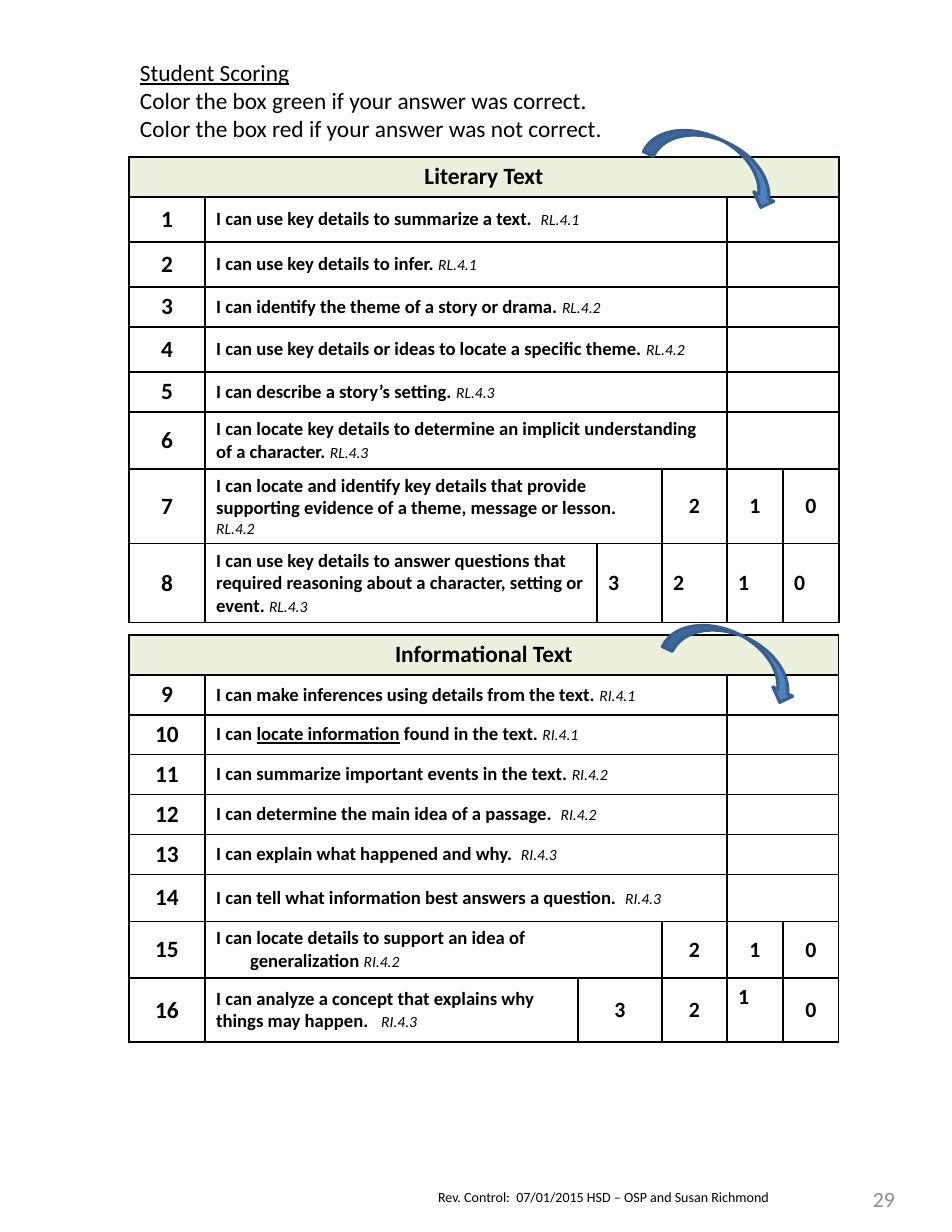
"""Build the student scoring page with its two checklists."""
import pptx
import pptx.util
import pptx.dml.color
import pptx.enum.shapes
import pptx.enum.text
import pptx.oxml
import pptx.oxml.ns

RGB = pptx.dml.color.RGBColor
BLACK, WHITE, GREEN = RGB(0, 0, 0), RGB(255, 255, 255), RGB(0xEB, 0xF1, 0xDE)
GRAY, BLUE, NAVY = RGB(0x8C, 0x8C, 0x8C), RGB(0x4F, 0x81, 0xBD), RGB(0x3A, 0x5F, 0x8C)
ALIGN = pptx.enum.text.PP_ALIGN
ANCHOR = pptx.enum.text.MSO_ANCHOR
LEFT, MID, RIGHT = ALIGN.LEFT, ALIGN.CENTER, ALIGN.RIGHT
PX = 914400 // 112

TABLES = [
    {"title": "Informational Text", "top": 635, "cols": [76, 373, 84, 65, 56, 56],
     "rows": [40, 40, 39, 40, 40, 40, 47, 57, 64], "align": MID,
     "items": [
         ("9", "I can make inferences using details from the text. ", "RI.4.1", ""),
         ("10", "I can |locate information| found in the text. ", "RI.4.1", ""),
         ("11", "I can summarize important events in the text. ", "RI.4.2", ""),
         ("12", "I can determine the main idea of a passage.  ", "RI.4.2", ""),
         ("13", "I can explain what happened and why.  ", "RI.4.3", ""),
         ("14", "I can tell what information best answers a question.  ", "RI.4.3", ""),
         ("15", "I can locate details to support an idea of\n\tgeneralization ", "RI.4.2", "210"),
         ("16", "I can analyze a concept that explains why\nthings may happen.   ",
          "RI.4.3", "3210")]},
    {"title": "Literary Text", "top": 157, "cols": [76, 392, 65, 65, 56, 56],
     "rows": [40, 45, 45, 40, 45, 40, 57, 75, 79], "align": LEFT,
     "items": [
         ("1", "I can use key details to summarize a text.  ", "RL.4.1", ""),
         ("2", "I can use key details to infer. ", "RL.4.1", ""),
         ("3", "I can identify the theme of a story or drama. ", "RL.4.2", ""),
         ("4", "I can use key details or ideas to locate a specific theme. ", "RL.4.2", ""),
         ("5", "I can describe a story’s setting. ", "RL.4.3", ""),
         ("6", "I can locate key details to determine an implicit understanding "
               "of a character. ", "RL.4.3", ""),
         ("7", "I can locate and identify key details that provide\n"
               "supporting evidence of a theme, message or lesson.  ", "RL.4.2", "210"),
         ("8", "I can use key details to answer questions that\n"
               "required reasoning about a character, setting or event. ", "RL.4.3", "3210")]},
]
INTRO = ["Student Scoring", "Color the box green if your answer was correct.",
         "Color the box red if your answer was not correct."]
FOOTER = "Rev. Control:  07/01/2015 HSD – OSP and Susan Richmond"
ARROWS = [(665, 635), (646, 140)]


def style(para, size, color=BLACK, align=LEFT, bold=None):
    font = para.font
    font.name, font.size, font.bold = "Calibri", pptx.util.Pt(size), bold
    font.color.rgb = color
    para.alignment = align


def paint(cell, color=WHITE):
    cell.fill.solid()
    cell.fill.fore_color.rgb = color
    cell.vertical_anchor = ANCHOR.MIDDLE
    props = cell._tc.get_or_add_tcPr()
    for spot, side in enumerate(("lnL", "lnR", "lnT", "lnB")):
        props.insert(spot, pptx.oxml.parse_xml(
            f'<a:{side} {pptx.oxml.ns.nsdecls("a")} w="12700"><a:solidFill>'
            f'<a:srgbClr val="{BLACK}"/></a:solidFill></a:{side}>'))


def label(cell, text, size, align=MID):
    para = cell.text_frame.paragraphs[0]
    para.text = text
    style(para, size, align=align, bold=True)


def skill(cell, text, code):
    frame = cell.text_frame
    for row, line in enumerate(text.split("\n")):
        para = frame.add_paragraph() if row else frame.paragraphs[0]
        style(para, 12)
        if line.startswith("\t"):
            para._p.get_or_add_pPr().set("marL", str(34 * PX))
        for part, words in enumerate(line.lstrip("\t").split("|")):
            run = para.add_run()
            run.text, run.font.bold = words, True
            if part % 2:
                run.font.underline = True
    run = para.add_run()
    run.text = code
    run.font.size, run.font.italic = pptx.util.Pt(10), True


def add_list(slide, data):
    cols, rows = data["cols"], data["rows"]
    frame = slide.shapes.add_table(len(rows), len(cols), 129 * PX, data["top"] * PX,
                                   sum(cols) * PX, sum(rows) * PX)
    table = frame.table
    table.first_row = table.horz_banding = False
    for col, width in zip(table.columns, cols):
        col.width = width * PX
    for row, height in zip(table.rows, rows):
        row.height = height * PX
    for cell in table.iter_cells():
        paint(cell)
        style(cell.text_frame.paragraphs[0], 12)
    head = table.cell(0, 0)
    head.merge(table.cell(0, 5))
    head.fill.fore_color.rgb = GREEN
    label(head, data["title"], 15)
    for row, (num, text, code, marks) in enumerate(data["items"], 1):
        first = 6 - (len(marks) or 2)
        if first > 2:
            table.cell(row, 1).merge(table.cell(row, first - 1))
        label(table.cell(row, 0), num, 15)
        skill(table.cell(row, 1), text, code)
        if not marks:
            table.cell(row, 4).merge(table.cell(row, 5))
        align = data["align"] if len(marks) == 4 else MID
        for col, mark in enumerate(marks, first):
            label(table.cell(row, col), mark, 14, align)
    if data["align"] == MID:
        odd = table.cell(8, 4)
        odd.vertical_anchor = ANCHOR.TOP
        odd.text_frame.paragraphs[0].alignment = LEFT


def add_text(slide, box, lines, size, color=BLACK, align=LEFT, anchor=ANCHOR.TOP):
    frame = slide.shapes.add_textbox(*(n * PX for n in box)).text_frame
    frame.word_wrap, frame.vertical_anchor = True, anchor
    for row, line in enumerate(lines):
        para = frame.add_paragraph() if row else frame.paragraphs[0]
        para.text = line
        style(para, size, color, align)
    return frame


def add_arrow(slide, left, top):
    kind = pptx.enum.shapes.MSO_SHAPE.CURVED_DOWN_ARROW
    arrow = slide.shapes.add_shape(kind, left * PX, top * PX, 141 * PX, 44 * PX)
    arrow.rotation = 25.4
    arrow.shadow.inherit = False
    arrow.fill.solid()
    arrow.fill.fore_color.rgb = BLUE
    arrow.line.color.rgb, arrow.line.width = NAVY, pptx.util.Pt(2)


def main():
    deck = pptx.Presentation()
    deck.slide_width, deck.slide_height = 952 * PX, 1232 * PX
    slide = deck.slides.add_slide(deck.slide_layouts[6])
    add_text(slide, (427, 1183, 476, 29), [FOOTER], 9)
    add_text(slide, (803, 1166, 103, 66), ["29"], 14, GRAY, RIGHT, ANCHOR.MIDDLE)
    for data in TABLES:
        add_list(slide, data)
    intro = add_text(slide, (129, 53, 635, 96), INTRO, 15)
    intro.paragraphs[0].runs[0].font.underline = True
    for spot in ARROWS:
        add_arrow(slide, *spot)
    deck.save("out.pptx")


if __name__ == "__main__":
    main()
